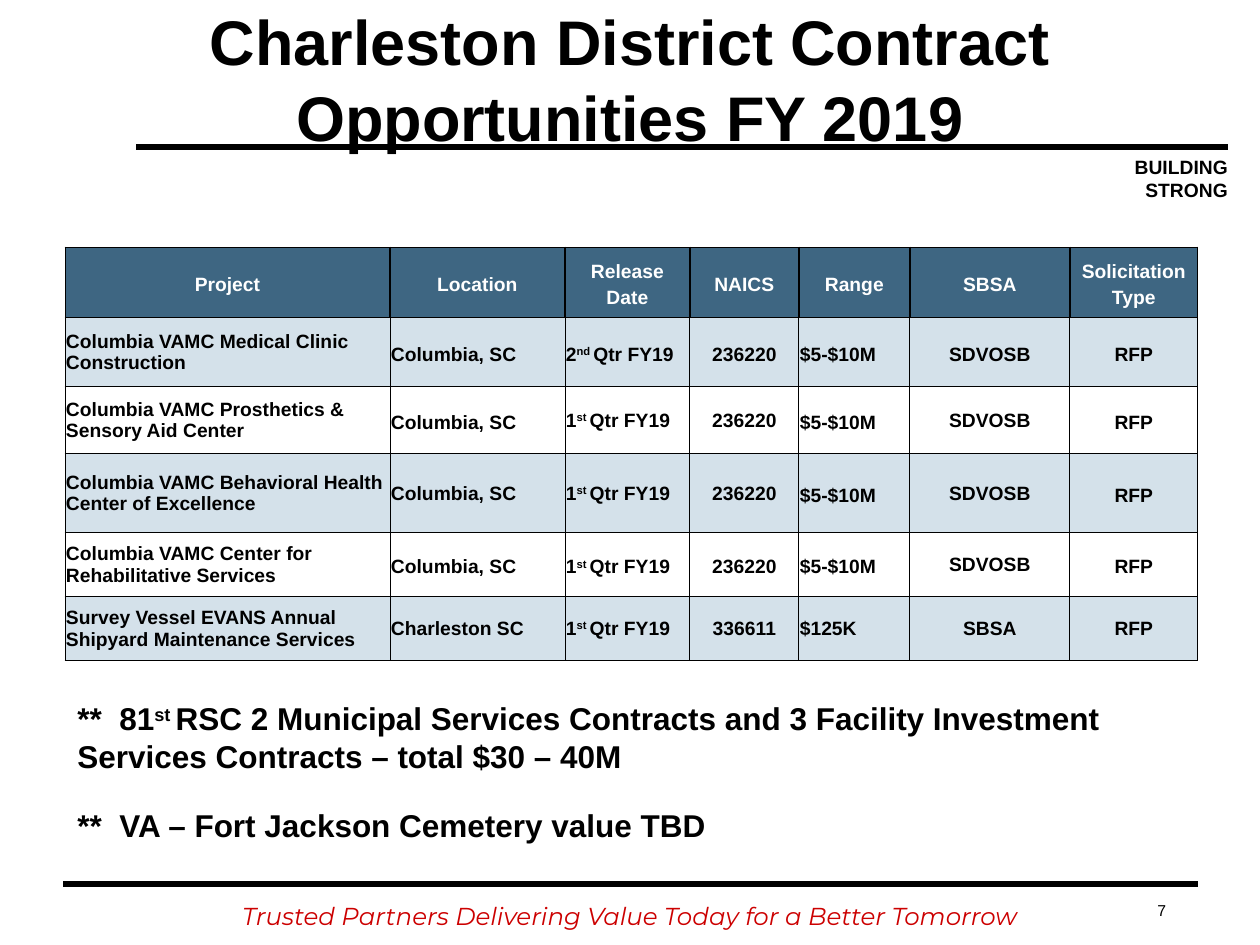
from lxml import etree
from pptx import Presentation
from pptx.dml.color import RGBColor
from pptx.enum.shapes import MSO_CONNECTOR
from pptx.enum.text import MSO_ANCHOR, PP_ALIGN
from pptx.oxml import parse_xml
from pptx.oxml.ns import nsdecls, qn
from pptx.util import Emu, Pt

PX_PER_INCH = 126
LEFT, CENTER, RIGHT = PP_ALIGN.LEFT, PP_ALIGN.CENTER, PP_ALIGN.RIGHT
TOP, MIDDLE = MSO_ANCHOR.TOP, MSO_ANCHOR.MIDDLE
STRAIGHT = MSO_CONNECTOR.STRAIGHT

BLACK = RGBColor(0x00, 0x00, 0x00)
WHITE = RGBColor(0xFF, 0xFF, 0xFF)
RED = RGBColor(0xCC, 0x00, 0x00)
HEADER_BLUE = RGBColor(0x3E, 0x66, 0x82)
BAND_BLUE = RGBColor(0xD4, 0xE1, 0xEA)

# Format values for each kind of text
TITLE = {"name": "Arial", "size": Pt(36), "bold": True}
TAG = {"name": "Arial", "size": Pt(11), "bold": True}
NOTE = {"name": "Arial", "size": Pt(18), "bold": True}
NUMBER = {"name": "Arial", "size": Pt(9)}
MOTTO = {"name": "Montserrat", "size": Pt(14), "italic": True}

# Table content; text between carets is superscript
HEADERS = ["Project", "Location", "Release\nDate", "NAICS", "Range", "SBSA",
           "Solicitation\nType"]
PROJECTS = [
    ["Columbia VAMC Medical Clinic Construction", "Columbia, SC",
     "2^nd ^Qtr FY19", "236220", "$5-$10M", "SDVOSB", "RFP"],
    ["Columbia VAMC Prosthetics & Sensory Aid Center", "Columbia, SC",
     "1^st ^Qtr FY19", "236220", "$5-$10M", "SDVOSB", "RFP"],
    ["Columbia VAMC Behavioral Health Center of Excellence", "Columbia, SC",
     "1^st ^Qtr FY19", "236220", "$5-$10M", "SDVOSB", "RFP"],
    ["Columbia VAMC Center for Rehabilitative Services", "Columbia, SC",
     "1^st ^Qtr FY19", "236220", "$5-$10M", "SDVOSB", "RFP"],
    ["Survey Vessel EVANS Annual Shipyard Maintenance Services",
     "Charleston SC", "1^st ^Qtr FY19", "336611", "$125K", "SBSA", "RFP"],
]
COLUMN_WIDTHS = [325, 175, 125, 109, 111, 160, 128]
ROW_HEIGHTS = [68, 69, 67, 79, 64, 64]
COLUMN_ALIGNMENTS = [LEFT, LEFT, LEFT, CENTER, LEFT, CENTER, CENTER]
# Columns with exact line spacing, for the header and each project
SPACED_COLUMNS = [range(7), range(1, 7), (1, 4, 6), (4, 6), (1, 2, 3, 4, 6), ()]


def px(length):
    return Emu(round(length * 914400 / PX_PER_INCH))


def write_text(frame, text, formats, color, alignment, spacing=None):
    for index, line in enumerate(text.split("\n")):
        paragraph = frame.add_paragraph() if index else frame.paragraphs[0]
        paragraph.alignment = alignment
        if spacing:
            paragraph.line_spacing = spacing
        for part, words in enumerate(line.split("^")):
            run = paragraph.add_run()
            run.text = words
            for name, value in formats.items():
                setattr(run.font, name, value)
            run.font.color.rgb = color
            if part % 2:
                run._r.get_or_add_rPr().set("baseline", "30000")


def add_text(slide, box, text, formats, alignment=LEFT, color=BLACK,
             anchor=TOP, inset=True, wrap=True, spacing=None):
    shape = slide.shapes.add_textbox(*map(px, box))
    frame = shape.text_frame
    frame.word_wrap = wrap
    frame.vertical_anchor = anchor
    if not inset:
        for side in ("left", "top", "right", "bottom"):
            setattr(frame, f"margin_{side}", 0)
    write_text(frame, text, formats, color, alignment, spacing)


def add_rule(slide, left, right, y):
    rule = slide.shapes.add_connector(STRAIGHT, px(right), px(y), px(left), px(y))
    rule.line.color.rgb = BLACK
    rule.line.width = Pt(3)
    etree.SubElement(rule._element.spPr, qn("a:effectLst"))


def set_borders(cell, widths):
    properties = cell._tc.get_or_add_tcPr()
    for index, (side, width) in enumerate(zip("LRTB", widths)):
        properties.insert(index, parse_xml(
            f'<a:ln{side} {nsdecls("a")} w="{Pt(width)}"><a:solidFill>'
            f'<a:srgbClr val="{BLACK}"/></a:solidFill></a:ln{side}>'))


def format_cell(cell, fill, margin, bottom, borders):
    cell.fill.solid()
    cell.fill.fore_color.rgb = fill
    cell.vertical_anchor = MIDDLE
    for side in ("left", "top", "right"):
        setattr(cell, f"margin_{side}", px(margin))
    cell.margin_bottom = px(bottom)
    set_borders(cell, borders)


def add_project_table(slide, left, top):
    rows = [HEADERS] + PROJECTS
    table = slide.shapes.add_table(
        len(rows), len(HEADERS), px(left), px(top),
        px(sum(COLUMN_WIDTHS)), px(sum(ROW_HEIGHTS))).table
    for column, width in zip(table.columns, COLUMN_WIDTHS):
        column.width = px(width)
    for row, height in zip(table.rows, ROW_HEIGHTS):
        row.height = px(height)

    last = len(HEADERS) - 1
    for r, values in enumerate(rows):
        for c, text in enumerate(values):
            cell = table.cell(r, c)
            if r == 0:
                borders = (1 if c else 0.5, 1 if c < last else 0.5, 0.5, 0.5)
                format_cell(cell, HEADER_BLUE, 9, 9, borders)
                color, alignment = WHITE, CENTER
            else:
                fill = BAND_BLUE if r % 2 else WHITE
                format_cell(cell, fill, 1, 0, (0.5,) * 4)
                color, alignment = BLACK, COLUMN_ALIGNMENTS[c]
            spacing = Pt(15) if c in SPACED_COLUMNS[r] else None
            write_text(cell.text_frame, text, TAG, color, alignment, spacing)


def main():
    presentation = Presentation()
    presentation.slide_width, presentation.slide_height = px(1260), px(945)
    slide = presentation.slides.add_slide(presentation.slide_layouts[6])

    # Frame of the page: tag, rules, motto and number
    add_text(slide, (1050, 155, 178, 24), "BUILDING STRONG", TAG, RIGHT, inset=False)
    add_rule(slide, 136, 1228, 147)
    add_text(slide, (0, 902, 1260, 28),
             "Trusted Partners Delivering Value Today for a Better Tomorrow",
             MOTTO, CENTER, RED, inset=False, spacing=Pt(16))
    add_rule(slide, 63, 1198, 884)
    add_text(slide, (1145, 895, 50, 32), "7", NUMBER)

    # Contract opportunities
    add_project_table(slide, 65, 247)

    # Notes below the table
    add_text(slide, (65, 693, 1133, 89),
             "**  81^st ^RSC 2 Municipal Services Contracts and 3 Facility "
             "Investment Services Contracts – total $30 – 40M", NOTE)
    add_text(slide, (65, 800, 660, 50),
             "**  VA – Fort Jackson Cemetery value TBD", NOTE, wrap=False)

    # Title
    add_text(slide, (63, 42, 1134, 73),
             "Charleston District Contract Opportunities FY 2019",
             TITLE, CENTER, anchor=MIDDLE)
    presentation.save("out.pptx")


if __name__ == "__main__":
    main()
